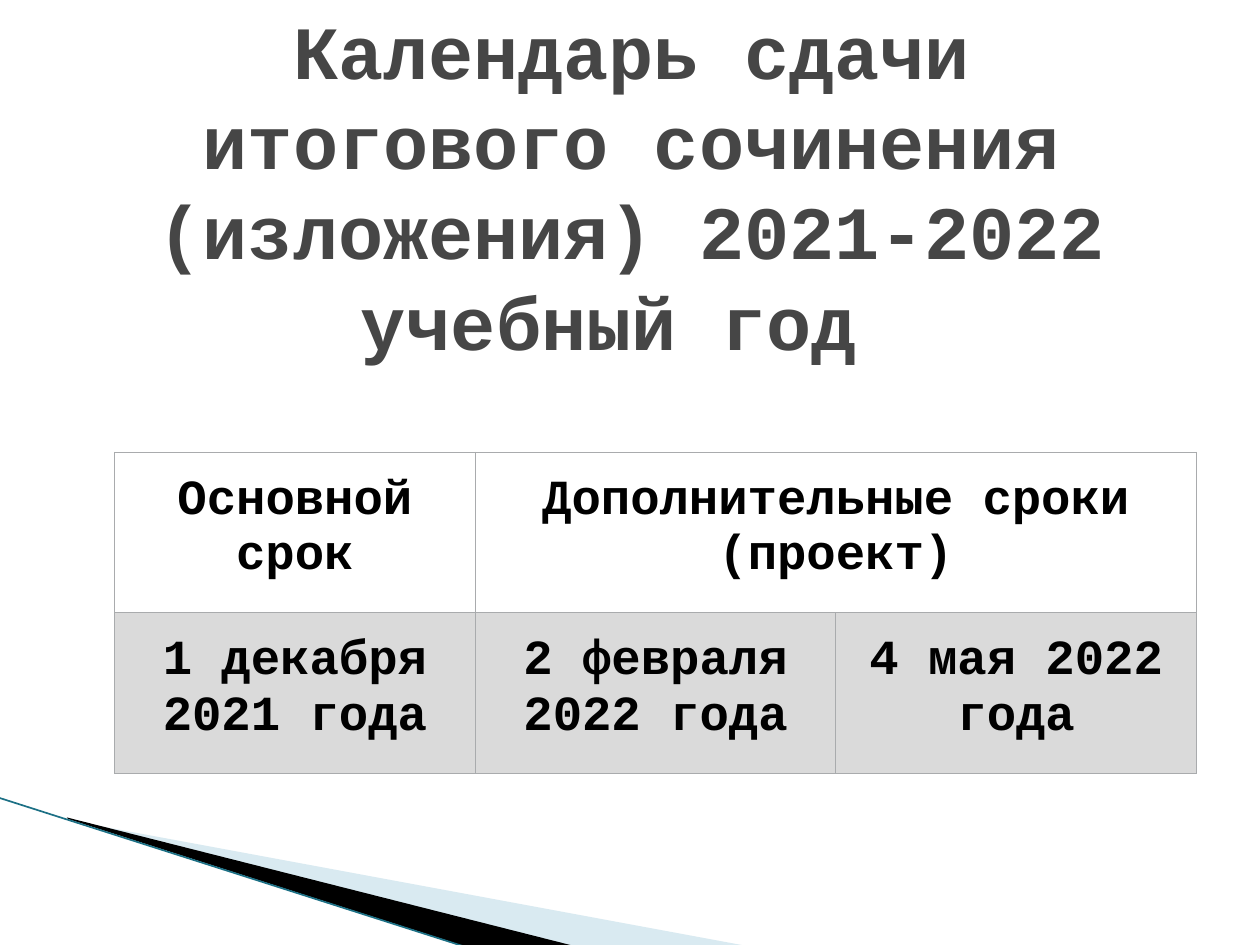
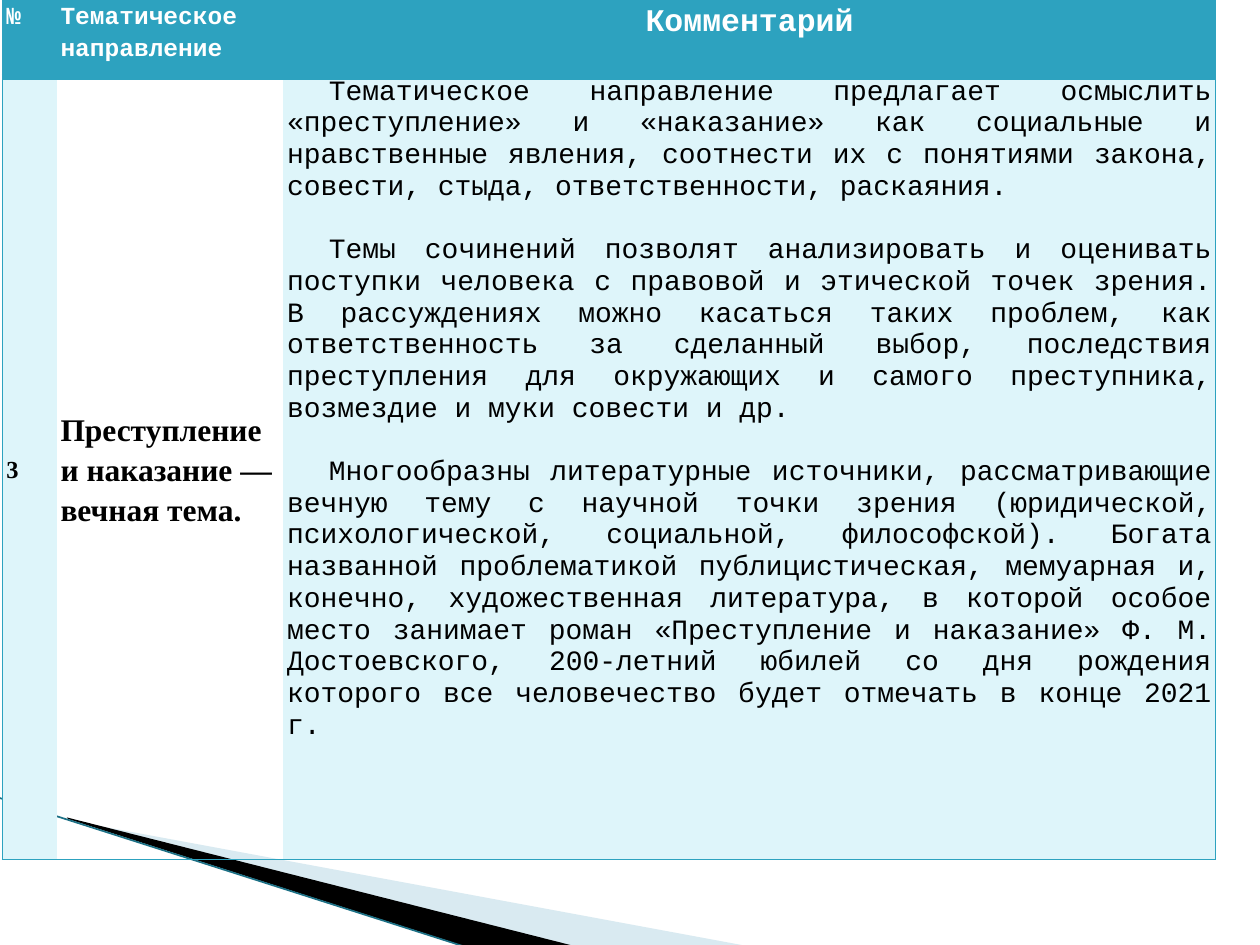
from lxml import etree
from pptx import Presentation
from pptx.dml.color import RGBColor
from pptx.enum.shapes import MSO_CONNECTOR
from pptx.enum.text import MSO_ANCHOR, PP_ALIGN
from pptx.oxml.ns import qn
from pptx.util import Cm, Pt

LEFT, CENTER, JUSTIFY = PP_ALIGN.LEFT, PP_ALIGN.CENTER, PP_ALIGN.JUSTIFY
TOP, MIDDLE = MSO_ANCHOR.TOP, MSO_ANCHOR.MIDDLE
STRAIGHT = MSO_CONNECTOR.STRAIGHT

MONO, SERIF = "Courier New", "Times New Roman"
BLACK, WHITE, TEXT_GRAY = "000000", "FFFFFF", "464646"
TEAL, PALE_TEAL, DARK_TEAL = "2DA2BF", "DEF5FA", "1C7085"
ROW_GRAY, GRID_GRAY, PALE_BLUE = "DADADA", "A9ABAD", "A0CBDC"
PLAIN_TABLE = "{2D5ABB26-0587-4C30-8999-92F81FD0307C}"

WEDGES = [
    (PALE_BLUE, 40, [(1.4, 16.54), (15.11, 19.08), (11.58, 19.08), (1.4, 16.51)]),
    (BLACK, 100, [(1.35, 16.48), (11.61, 19.08), (9.45, 19.1), (1.37, 16.51)]),
]
WEDGE_EDGE = [(-0.03, 16.08), (9.42, 19.1)]

CALENDAR_TITLE = "Календарь сдачи итогового сочинения (изложения) 2021-2022 учебный год "
CALENDAR = [
    (WHITE, ["Основной срок", "Дополнительные сроки (проект)", None]),
    (ROW_GRAY, ["1 декабря 2021 года", "2 февраля 2022 года", "4 мая 2022 года"]),
]

HEADINGS = [
    ("№", dict(size=14, align=JUSTIFY)),
    ("Тематическое направление", dict(size=14)),
    ("Комментарий", dict(size=18, align=CENTER)),
]
COMMENTS = [
    "Тематическое направление предлагает осмыслить «преступление» и «наказание» как "
    "социальные и нравственные явления, соотнести их с понятиями закона, совести, стыда, "
    "ответственности, раскаяния.",
    "Темы сочинений позволят анализировать и оценивать поступки человека с правовой и "
    "этической точек зрения. В рассуждениях можно касаться таких проблем, как "
    "ответственность за сделанный выбор, последствия преступления для окружающих и самого "
    "преступника, возмездие и муки совести и др.",
    "Многообразны литературные источники, рассматривающие вечную тему с научной точки "
    "зрения (юридической, психологической, социальной, философской). Богата названной "
    "проблематикой публицистическая, мемуарная и, конечно, художественная литература, в "
    "которой особое место занимает роман «Преступление и наказание» Ф. М. Достоевского, "
    "200-летний юбилей со дня рождения которого все человечество будет отмечать в конце "
    "2021 г.",
]
TOPIC = [
    (["3"], PALE_TEAL, dict(size=14, font=SERIF, align=JUSTIFY, anchor=MIDDLE)),
    (["Преступление и наказание — вечная тема."], None,
     dict(size=18, font=SERIF, anchor=MIDDLE)),
    (COMMENTS, PALE_TEAL,
     dict(size=16, bold=False, align=JUSTIFY, spacing=1, indent=0.84, gap=18.1)),
]


def rgb(color):
    return RGBColor.from_string(color)


def write(frame, texts, size, font=MONO, color=BLACK, bold=True, align=LEFT,
          spacing=1.0, indent=0, gap=0):
    frame.word_wrap = True
    for index, text in enumerate(texts):
        paragraph = frame.paragraphs[0] if index == 0 else frame.add_paragraph()
        paragraph.alignment = align
        paragraph.line_spacing = spacing
        if index:
            paragraph.space_before = Pt(gap)
        if indent:
            paragraph._p.get_or_add_pPr().set("indent", str(Cm(indent)))
        run = paragraph.add_run()
        run.text = text
        run.font.name = font
        run.font.size = Pt(size)
        run.font.bold = bold
        run.font.color.rgb = rgb(color)


def add_wedges(slide):
    for color, opacity, points in WEDGES:
        corners = [(Cm(x), Cm(y)) for x, y in points]
        builder = slide.shapes.build_freeform(*corners[0])
        builder.add_line_segments(corners[1:])
        wedge = builder.convert_to_shape()
        wedge.shadow.inherit = False
        wedge.line.fill.background()
        wedge.fill.solid()
        wedge.fill.fore_color.rgb = rgb(color)
        if opacity < 100:
            shade = wedge._element.spPr.find(".//" + qn("a:srgbClr"))
            etree.SubElement(shade, qn("a:alpha"), val=str(opacity * 1000))
    start, end = WEDGE_EDGE
    edge = slide.shapes.add_connector(STRAIGHT, *(Cm(v) for v in start + end))
    edge.line.color.rgb = rgb(DARK_TEAL)
    edge.line.width = Pt(0.95)
    etree.SubElement(edge._element.spPr, qn("a:effectLst"))


def add_plain_table(slide, left, top, widths, heights):
    frame = slide.shapes.add_table(len(heights), len(widths), Cm(left), Cm(top),
                                   Cm(sum(widths)), Cm(sum(heights)))
    table = frame.table
    table._tbl.tblPr.find(qn("a:tableStyleId")).text = PLAIN_TABLE
    for column, width in zip(table.columns, widths):
        column.width = Cm(width)
    for row, height in zip(table.rows, heights):
        row.height = Cm(height)
    return table


def format_cell(cell, fill, borders, margins, anchor=TOP):
    properties = cell._tc.get_or_add_tcPr()
    for side in "LRTB":
        if side in borders:
            color, width = borders[side]
            line = etree.SubElement(properties, qn("a:ln" + side), w=str(Pt(width)))
            solid = etree.SubElement(line, qn("a:solidFill"))
            etree.SubElement(solid, qn("a:srgbClr"), val=color)
    if fill:
        cell.fill.solid()
        cell.fill.fore_color.rgb = rgb(fill)
    else:
        cell.fill.background()
    across, down = margins
    cell.margin_left = cell.margin_right = Cm(across)
    cell.margin_top = cell.margin_bottom = Cm(down)
    cell.vertical_anchor = anchor


def build_calendar(slide):
    title = slide.shapes.add_textbox(Cm(1.3), Cm(2.13), Cm(22.86), Cm(3.18))
    title.text_frame.vertical_anchor = MIDDLE
    write(title.text_frame, [CALENDAR_TITLE], size=43, color=TEXT_GRAY, align=CENTER)

    table = add_plain_table(slide, 2.31, 9.12, [7.27] * 3, [3.09] * 2)
    grid = dict.fromkeys("LRTB", (GRID_GRAY, 0.75))
    for row, (fill, texts) in enumerate(CALENDAR):
        for column, text in enumerate(texts):
            cell = table.cell(row, column)
            format_cell(cell, fill, grid, (0.51, 0.43))
            if text:
                write(cell.text_frame, [text], size=28, align=CENTER)
    table.cell(0, 1).merge(table.cell(0, 2))


def build_topic(slide):
    table = add_plain_table(slide, 0.05, 0, [1.09, 4.57, 18.8], [1.55, 15.77])
    margins = (0.08, 0)
    thin, thick = (TEAL, 0.75), (TEAL, 4)
    last = len(HEADINGS) - 1
    for column, (heading, topic) in enumerate(zip(HEADINGS, TOPIC)):
        sides = {}
        if column == 0:
            sides["L"] = thin
        if column == last:
            sides["R"] = thin

        text, style = heading
        cell = table.cell(0, column)
        format_cell(cell, TEAL, {**sides, "T": thin, "B": thick}, margins)
        write(cell.text_frame, [text], color=WHITE, spacing=1.15, **style)

        texts, fill, style = topic
        style = {"spacing": 1.15, **style}
        cell = table.cell(1, column)
        format_cell(cell, fill, {**sides, "T": thick, "B": thin}, margins,
                    style.pop("anchor", TOP))
        write(cell.text_frame, texts, **style)


def main():
    presentation = Presentation()
    presentation.slide_width = Cm(25.4)
    presentation.slide_height = Cm(19.05)
    for build in (build_calendar, build_topic):
        slide = presentation.slides.add_slide(presentation.slide_layouts[6])
        add_wedges(slide)
        build(slide)
    presentation.save("out.pptx")


if __name__ == "__main__":
    main()
